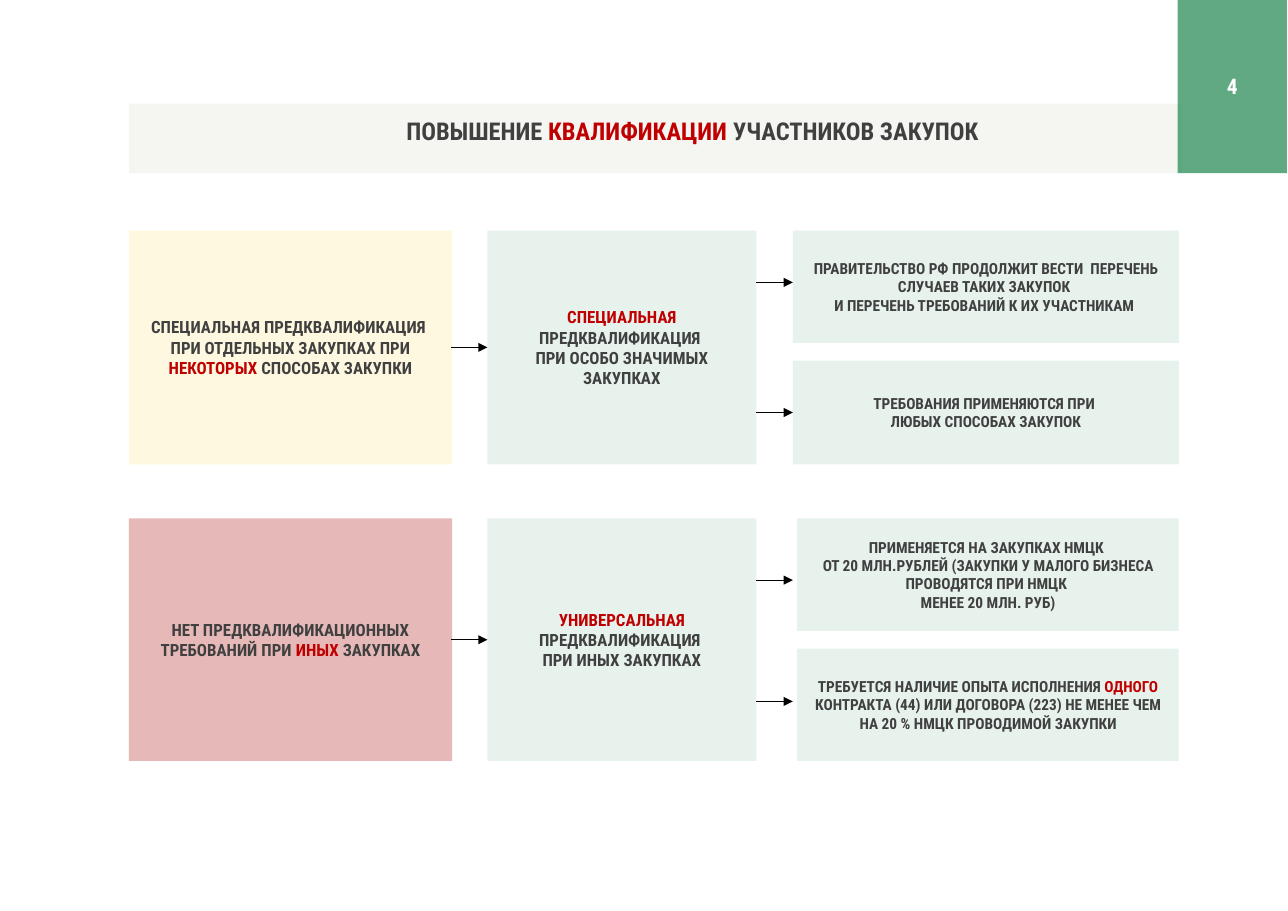
"""Build the slide on raising the qualification of procurement participants."""
import dataclasses

import lxml.etree
import pptx
import pptx.dml.color
import pptx.enum.shapes
import pptx.enum.text
import pptx.oxml.ns
import pptx.util

Inches = pptx.util.Inches

TITLE = "ПОВЫШЕНИЕ *КВАЛИФИКАЦИИ* УЧАСТНИКОВ ЗАКУПОК"
PAGE_NUMBER = "4"
ROWS = [
    {
        "top": 2.09, "height": 2.12, "detail_left": 7.19, "before_fill": "FFF8E1",
        "before": "СПЕЦИАЛЬНАЯ ПРЕДКВАЛИФИКАЦИЯ \nПРИ ОТДЕЛЬНЫХ ЗАКУПКАХ ПРИ "
                  "*НЕКОТОРЫХ* СПОСОБАХ ЗАКУПКИ",
        "after": "*СПЕЦИАЛЬНАЯ* ПРЕДКВАЛИФИКАЦИЯ \nПРИ ОСОБО ЗНАЧИМЫХ ЗАКУПКАХ",
        "details": [
            (2.56, "ПРАВИТЕЛЬСТВО РФ ПРОДОЛЖИТ ВЕСТИ  ПЕРЕЧЕНЬ СЛУЧАЕВ ТАКИХ ЗАКУПОК "
                   "\nИ ПЕРЕЧЕНЬ ТРЕБОВАНИЙ К ИХ УЧАСТНИКАМ "),
            (3.74, "ТРЕБОВАНИЯ ПРИМЕНЯЮТСЯ ПРИ \nЛЮБЫХ СПОСОБАХ ЗАКУПОК"),
        ],
    },
    {
        "top": 4.7, "height": 2.2, "detail_left": 7.23, "before_fill": "E6B9B8",
        "before": "НЕТ ПРЕДКВАЛИФИКАЦИОННЫХ ТРЕБОВАНИЙ ПРИ *ИНЫХ* ЗАКУПКАХ",
        "after": "*УНИВЕРСАЛЬНАЯ* ПРЕДКВАЛИФИКАЦИЯ \nПРИ ИНЫХ ЗАКУПКАХ",
        "details": [
            (5.26, "ПРИМЕНЯЕТСЯ НА ЗАКУПКАХ НМЦК \nОТ 20 МЛН.РУБЛЕЙ (ЗАКУПКИ У МАЛОГО "
                   "БИЗНЕСА ПРОВОДЯТСЯ ПРИ НМЦК \nМЕНЕЕ 20 МЛН. РУБ)"),
            (6.36, "ТРЕБУЕТСЯ НАЛИЧИЕ ОПЫТА ИСПОЛНЕНИЯ *ОДНОГО* КОНТРАКТА (44) ИЛИ "
                   "ДОГОВОРА (223) НЕ МЕНЕЕ ЧЕМ НА 20 % НМЦК ПРОВОДИМОЙ ЗАКУПКИ"),
        ],
    },
]
BEFORE_LEFT, BEFORE_WIDTH = 1.17, 2.93
AFTER_LEFT, AFTER_WIDTH = 4.42, 2.44
DETAIL_RIGHT, DETAIL_HEIGHT, DETAIL_GAP = 10.69, 1.02, 0.16
ARROW_LENGTH = 0.33


@dataclasses.dataclass(frozen=True)
class Theme:
    font: str = "Roboto Condensed"
    text: str = "404040"
    accent: str = "C00000"
    white: str = "FFFFFF"
    line: str = "000000"
    band: str = "F5F6F1"
    box: str = "E7F2EC"
    corner: str = "077A3E"
    corner_opacity: int = 64
    title_size: int = 16
    number_size: int = 14
    box_size: int = 11
    detail_size: int = 10


THEME = Theme()


def rgb(value):
    return pptx.dml.color.RGBColor.from_string(value)


def write(shape, text, size, color=THEME.text, anchor=pptx.enum.text.MSO_ANCHOR.MIDDLE):
    frame = shape.text_frame
    frame.word_wrap = True
    frame.auto_size = pptx.enum.text.MSO_AUTO_SIZE.NONE
    frame.vertical_anchor = anchor
    paragraph = frame.paragraphs[0]
    paragraph.alignment = pptx.enum.text.PP_ALIGN.CENTER
    for part_index, part in enumerate(text.split("*")):
        for line_index, line in enumerate(part.split("\n")):
            if line_index:
                paragraph.add_line_break()
            if line:
                run = paragraph.add_run()
                run.text = line
                run.font.name = THEME.font
                run.font.size = pptx.util.Pt(size)
                run.font.bold = True
                run.font.color.rgb = rgb(THEME.accent if part_index % 2 else color)


def add_box(slide, left, top, width, height, fill):
    shape = slide.shapes.add_shape(
        pptx.enum.shapes.MSO_SHAPE.RECTANGLE,
        Inches(left), Inches(top), Inches(width), Inches(height))
    shape.shadow.inherit = False
    shape.fill.solid()
    shape.fill.fore_color.rgb = rgb(fill)
    shape.line.fill.background()
    return shape


def add_arrow(slide, left, y):
    arrow = slide.shapes.add_connector(
        pptx.enum.shapes.MSO_CONNECTOR.STRAIGHT,
        Inches(left), Inches(y), Inches(left + ARROW_LENGTH), Inches(y))
    arrow.line.color.rgb = rgb(THEME.line)
    arrow.line.width = pptx.util.Pt(0.75)
    tag = pptx.oxml.ns.qn
    lxml.etree.SubElement(arrow.line._get_or_add_ln(), tag("a:tailEnd"), type="triangle")
    lxml.etree.SubElement(arrow._element.spPr, tag("a:effectLst"))


def add_header(slide):
    title = slide.shapes.title
    band = add_box(slide, 1.17, 0.94, 9.55, 0.63, THEME.band)
    title._element.addprevious(band._element)
    title.left, title.top = Inches(2.14), Inches(1)
    title.width, title.height = Inches(8.28), Inches(0.37)
    write(title, TITLE, THEME.title_size, anchor=pptx.enum.text.MSO_ANCHOR.TOP)

    corner = add_box(slide, 10.68, -0.01, 0.99, 1.58, THEME.corner)
    color = corner._element.spPr.find(".//" + pptx.oxml.ns.qn("a:srgbClr"))
    lxml.etree.SubElement(
        color, pptx.oxml.ns.qn("a:alpha"), val=str(THEME.corner_opacity * 1000))
    write(corner, PAGE_NUMBER, THEME.number_size, THEME.white)


def add_row(slide, row):
    top, height, detail_left = row["top"], row["height"], row["detail_left"]
    for left, width, fill, text in (
        (BEFORE_LEFT, BEFORE_WIDTH, row["before_fill"], row["before"]),
        (AFTER_LEFT, AFTER_WIDTH, THEME.box, row["after"]),
    ):
        write(add_box(slide, left, top, width, height, fill), text, THEME.box_size)
    add_arrow(slide, AFTER_LEFT - ARROW_LENGTH, top + height / 2)

    detail_top = top
    for arrow_y, text in row["details"]:
        detail_height = min(DETAIL_HEIGHT, top + height - detail_top)
        detail = add_box(slide, detail_left, detail_top, DETAIL_RIGHT - detail_left,
                         detail_height, THEME.box)
        write(detail, text, THEME.detail_size)
        add_arrow(slide, AFTER_LEFT + AFTER_WIDTH, arrow_y)
        detail_top += detail_height + DETAIL_GAP


def main():
    presentation = pptx.Presentation()
    presentation.slide_width = Inches(11.68)
    presentation.slide_height = Inches(8.26)
    slide = presentation.slides.add_slide(presentation.slide_layouts[5])
    add_header(slide)
    for row in ROWS:
        add_row(slide, row)
    presentation.save("out.pptx")


if __name__ == "__main__":
    main()
